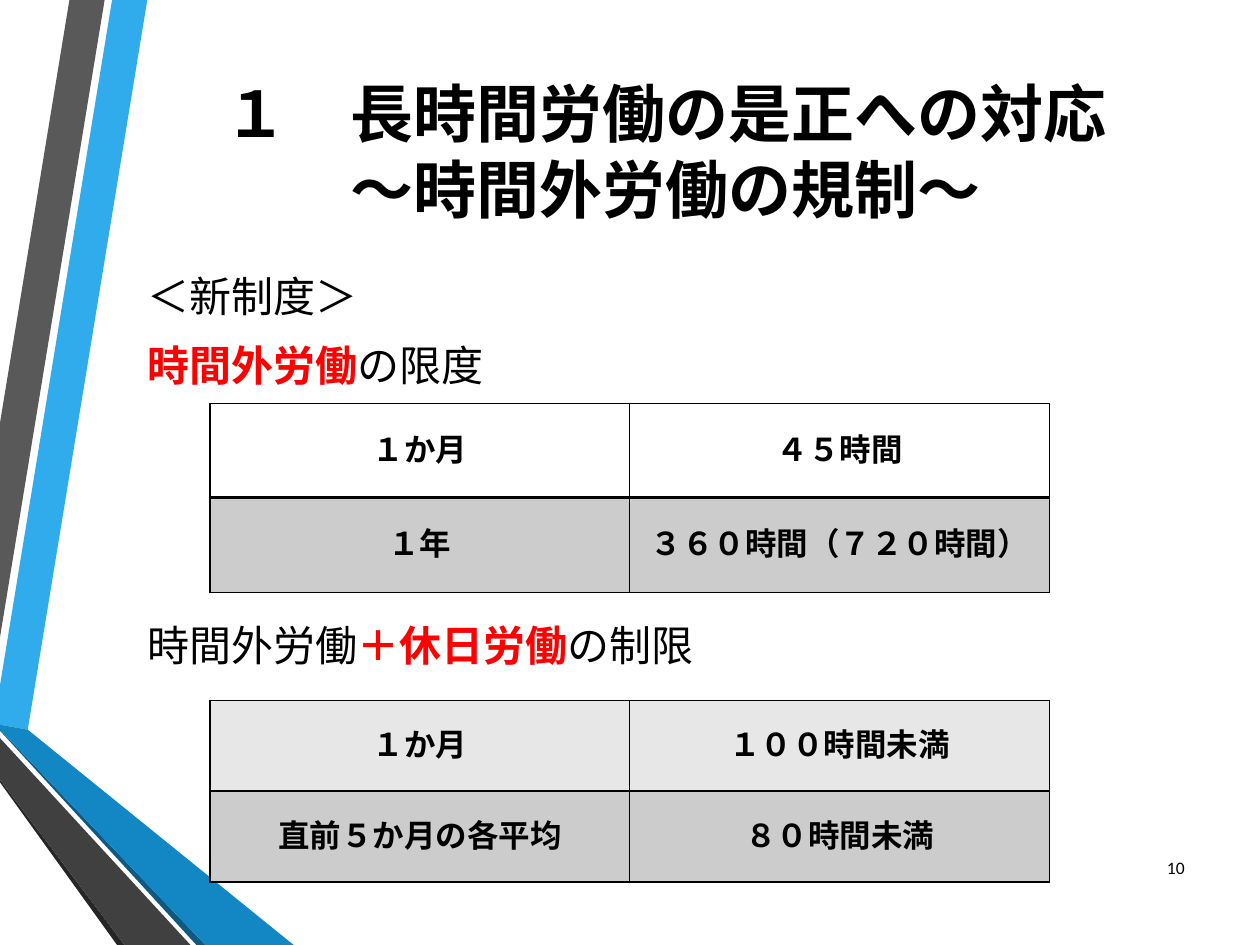
from lxml.etree import SubElement
from pptx import Presentation
from pptx.dml.color import RGBColor
from pptx.enum.text import MSO_ANCHOR, PP_ALIGN
from pptx.oxml import parse_xml
from pptx.oxml.ns import nsdecls, qn
from pptx.util import Cm, Pt

HUES = {
    "black": "000000", "red": "FF0000", "sky": "30ACEC", "grey": "595959",
    "soot": "262626", "navy": "0C5A82", "blue": "1287C3", "coal": "404040",
    "pale": "E7E7E7", "mid": "CCCCCC",
}
SANS = "Calibri"
GOTHIC = "Noto Sans CJK JP"

# Ribbon outlines at the left edge, in hundredths of a centimetre
BANDS = [
    ("sky", [(0, 1382), (0, 1461), (56, 1471), (297, 0), (226, 0)]),
    ("grey", [(211, 0), (140, 0), (0, 853), (0, 1285)]),
    ("soot", [(0, 1572), (0, 1577), (236, 1905), (251, 1905)]),
    ("navy", [(0, 1471), (0, 1473), (396, 1905), (414, 1905)]),
    ("blue", [(0, 1471), (414, 1905), (592, 1905), (56, 1471), (0, 1461)]),
    ("coal", [(0, 1572), (251, 1905), (384, 1905), (0, 1488)]),
]


def hue(name):
    return RGBColor.from_string(HUES[name])


def add_run(para, text, size, color="black", bold=False, face=SANS):
    run = para.add_run()
    run.text = text
    font = run.font
    font.size, font.bold, font.name = Pt(size), bold, face
    font.color.rgb = hue(color)
    SubElement(run._r.get_or_add_rPr(), qn("a:ea")).set("typeface", face)


def add_band(slide, color, pts):
    pen = slide.shapes.build_freeform(*pts[0], scale=Cm(0.01))
    pen.add_line_segments(pts[1:], close=True)
    band = pen.convert_to_shape()
    band.shadow.inherit = False
    band.fill.solid()
    band.fill.fore_color.rgb = hue(color)
    band.line.fill.background()


def set_title(slide, lines):
    title = slide.shapes.title
    title.left, title.top = Cm(2.72), Cm(1.27)
    title.width, title.height = Cm(21.41), Cm(5.51)
    frame = title.text_frame
    frame.vertical_anchor = MSO_ANCHOR.TOP
    frame.margin_top = Cm(0.22)
    para = frame.paragraphs[0]
    para.alignment = PP_ALIGN.CENTER
    para.line_spacing = Pt(43.5)
    for i, line in enumerate(lines):
        if i:
            para.add_line_break()
        add_run(para, line, 36, bold=True, face=GOTHIC)


def add_box(slide, left, top, width, height):
    box = slide.shapes.add_textbox(Cm(left), Cm(top), Cm(width), Cm(height))
    box.text_frame.word_wrap = True
    return box.text_frame


def add_body(slide, paras):
    frame = add_box(slide, 2.72, 5.33, 21.41, 13.21)
    for i, (gap, runs) in enumerate(paras):
        para = frame.add_paragraph() if i else frame.paragraphs[0]
        para.space_before, para.space_after = Pt(gap), Pt(6)
        for text, strong in runs:
            add_run(para, text, 24, "red" if strong else "black", strong)


def add_edges(cell, widths):
    props = cell._tc.get_or_add_tcPr()
    for i, (side, width) in enumerate(zip("LRTB", widths)):
        props.insert(i, parse_xml(
            f'<a:ln{side} {nsdecls("a")} w="{Pt(width)}"><a:solidFill>'
            f'<a:srgbClr val="{HUES["black"]}"/></a:solidFill></a:ln{side}>'))


def add_grid(slide, top, height, rows, fills, rule):
    shape = slide.shapes.add_table(
        len(rows), 2, Cm(4.23), Cm(top), Cm(16.93), Cm(height))
    table = shape.table
    table.first_row = table.horz_banding = False
    for r, (row, fill) in enumerate(zip(rows, fills)):
        for c, text in enumerate(row):
            cell = table.cell(r, c)
            cell.vertical_anchor = MSO_ANCHOR.MIDDLE
            if fill:
                cell.fill.solid()
                cell.fill.fore_color.rgb = hue(fill)
            else:
                cell.fill.background()
            # The rule between the rows may be heavier than the frame
            add_edges(cell, (1, 1, rule if r else 1, 1 if r else rule))
            para = cell.text_frame.paragraphs[0]
            para.alignment = PP_ALIGN.CENTER
            add_run(para, text, 18, bold=True)


def add_page(slide, number):
    frame = add_box(slide, 22.94, 16.97, 1.19, 1.02)
    frame.vertical_anchor = MSO_ANCHOR.MIDDLE
    para = frame.paragraphs[0]
    para.alignment = PP_ALIGN.RIGHT
    add_run(para, number, 10)


def main():
    deck = Presentation()
    deck.slide_width, deck.slide_height = Cm(25.4), Cm(19.05)
    slide = deck.slides.add_slide(deck.slide_layouts[5])

    # Ribbons
    for color, pts in BANDS:
        add_band(slide, color, pts)

    # Title and text; the last line leaves room for the first table
    set_title(slide, ["１　長時間労働の是正への対応", "～時間外労働の規制～"])
    add_body(slide, [
        (4.8, [("＜新制度＞", False)]),
        (4.8, [("時間外労働", True), ("の限度", False)]),
        (125, [("時間外労働", False), ("＋休日労働", True), ("の制限", False)]),
    ])
    add_page(slide, "10")

    # Tables of limits
    add_grid(slide, 8.13, 3.81,
             [("１か月", "４５時間"), ("１年", "３６０時間（７２０時間）")],
             (None, "mid"), 2)
    add_grid(slide, 14.12, 3.66,
             [("１か月", "１００時間未満"), ("直前５か月の各平均", "８０時間未満")],
             ("pale", "mid"), 1)

    deck.save("out.pptx")


if __name__ == "__main__":
    main()
